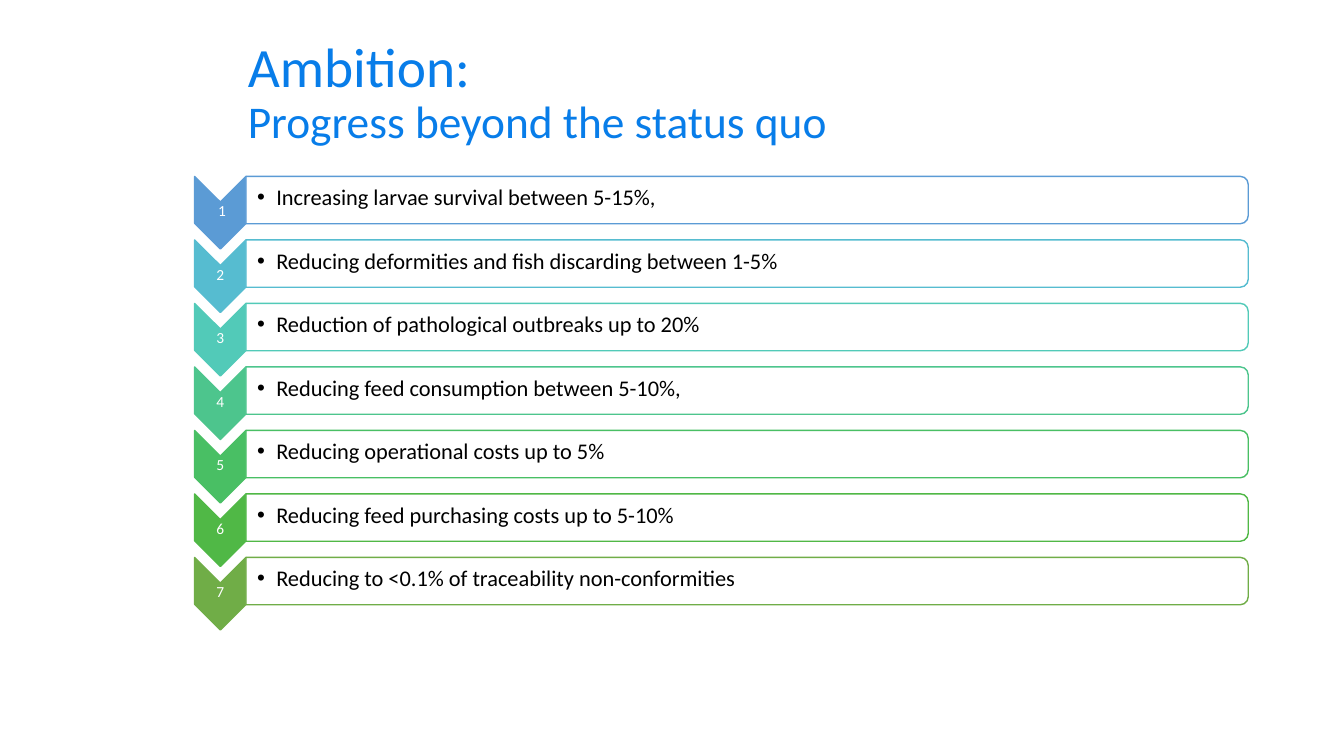
"""Build the slide that lists seven ambitions beside a column of chevrons."""
from dataclasses import dataclass

from lxml import etree
from pptx import Presentation
from pptx.dml.color import RGBColor
from pptx.enum.shapes import MSO_SHAPE
from pptx.enum.text import MSO_ANCHOR, PP_ALIGN
from pptx.oxml.ns import qn
from pptx.util import Pt

CHEVRON = MSO_SHAPE.CHEVRON
BAR = MSO_SHAPE.ROUND_2_SAME_RECTANGLE
MIDDLE, BOTTOM = MSO_ANCHOR.MIDDLE, MSO_ANCHOR.BOTTOM
LEFT, CENTER = PP_ALIGN.LEFT, PP_ALIGN.CENTER

PX = 9144
BLANK_LAYOUT = 6
FIRST_ROW_TOP = 175
ROW_PITCH = 63


@dataclass(frozen=True)
class Theme:
    font: str = "Calibri"
    title_color: str = "087DE9"
    number_color: str = "FFFFFF"
    body_color: str = "000000"
    bar_fill: str = "FFFFFF"
    bar_opacity: int = 90
    title_size: float = 39.6
    subtitle_size: float = 32.4
    number_size: float = 11
    body_size: float = 16
    line_width: float = 1
    line_spacing: float = 0.9


THEME = Theme()

AMBITIONS = [
    (" 1", "5B9BD5", "Increasing larvae survival between 5-15%,"),
    ("2", "56BCD0", "Reducing deformities and fish discarding between 1-5%"),
    ("3", "52CAB8", "Reduction of pathological outbreaks up to 20%"),
    ("4", "4DC58D", "Reducing feed consumption between 5-10%,"),
    ("5", "49BF64", "Reducing operational costs up to 5%"),
    ("6", "50B846", "Reducing feed purchasing costs up to 5-10%"),
    ("7", "70AD47", "Reducing to <0.1% of traceability non-conformities"),
]


def px(length):
    return int(length * PX)


def set_font(font, size, color):
    font.name = THEME.font
    font.size = Pt(size)
    font.color.rgb = RGBColor.from_string(color)


def add_turned_shape(slide, preset, left, top, width, height, fill, line):
    shift = (width - height) / 2
    shape = slide.shapes.add_shape(
        preset, px(left + shift), px(top - shift), px(height), px(width))
    shape.rotation = 90
    shape.shadow.inherit = False
    shape.fill.solid()
    shape.fill.fore_color.rgb = RGBColor.from_string(fill)
    shape.line.color.rgb = RGBColor.from_string(line)
    shape.line.width = Pt(THEME.line_width)
    return shape


def set_opacity(shape, percent):
    color = shape.fill._xPr.find(qn("a:solidFill"))[0]
    etree.SubElement(color, qn("a:alpha"), val=str(percent * 1000))


def add_text_box(slide, left, top, width, height, anchor, margins):
    box = slide.shapes.add_textbox(px(left), px(top), px(width), px(height))
    frame = box.text_frame
    frame.word_wrap = True
    frame.vertical_anchor = anchor
    (frame.margin_left, frame.margin_top,
     frame.margin_right, frame.margin_bottom) = map(px, margins)
    paragraph = frame.paragraphs[0]
    paragraph.line_spacing = THEME.line_spacing
    return paragraph


def add_bullet(paragraph, indent):
    properties = paragraph._p.get_or_add_pPr()
    properties.set("marL", str(px(indent)))
    properties.set("indent", str(px(-indent)))
    etree.SubElement(properties, qn("a:buFont"), typeface="Arial")
    etree.SubElement(properties, qn("a:buChar"), char="•")


def add_title(slide, title, subtitle):
    paragraph = add_text_box(slide, 236, 53, 1074, 99, BOTTOM, (10, 5, 10, 5))
    title_run = paragraph.add_run()
    title_run.text = title
    set_font(title_run.font, THEME.title_size, THEME.title_color)
    paragraph.add_line_break()
    subtitle_run = paragraph.add_run()
    subtitle_run.text = subtitle
    set_font(subtitle_run.font, THEME.subtitle_size, THEME.title_color)


def add_ambition(slide, top, number, color, text):
    add_turned_shape(slide, CHEVRON, 193, top, 51, 72, color, color)
    label = add_text_box(slide, 193, top + 24, 51, 22, MIDDLE, (1, 1, 1, 1))
    label.alignment = CENTER
    label.add_run().text = number
    set_font(label.font, THEME.number_size, THEME.number_color)

    bar = add_turned_shape(
        slide, BAR, 244, top, 994, 47, THEME.bar_fill, color)
    set_opacity(bar, THEME.bar_opacity)
    body = add_text_box(slide, 243, top + 1, 991, 42, MIDDLE, (12, 1, 1, 1))
    body.alignment = LEFT
    add_bullet(body, 19)
    body.add_run().text = text
    set_font(body.font, THEME.body_size, THEME.body_color)


def main():
    presentation = Presentation()
    presentation.slide_width = px(1333)
    presentation.slide_height = px(750)
    slide = presentation.slides.add_slide(
        presentation.slide_layouts[BLANK_LAYOUT])
    add_title(slide, "Ambition:", "Progress beyond the status quo")
    for row, (number, color, text) in enumerate(AMBITIONS):
        add_ambition(
            slide, FIRST_ROW_TOP + row * ROW_PITCH, number, color, text)
    presentation.save("out.pptx")


if __name__ == "__main__":
    main()
